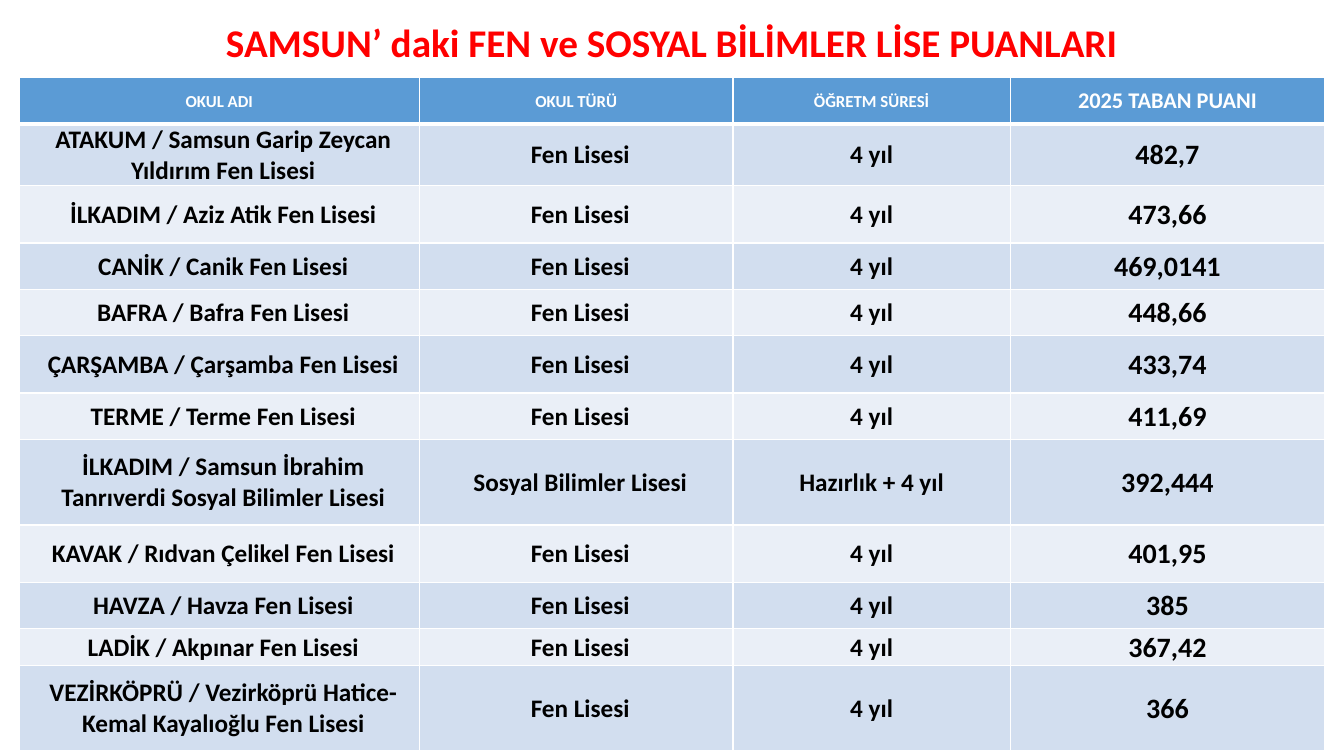
from pptx import Presentation
from pptx.dml.color import RGBColor
from pptx.enum.text import MSO_ANCHOR, PP_ALIGN
from pptx.oxml import parse_xml
from pptx.oxml.ns import nsdecls
from pptx.util import Pt

CENTER = PP_ALIGN.CENTER
MIDDLE = MSO_ANCHOR.MIDDLE

RED = RGBColor(0xFF, 0x00, 0x00)
WHITE = RGBColor(0xFF, 0xFF, 0xFF)
BLACK = RGBColor(0x00, 0x00, 0x00)
HEADER_BLUE = RGBColor(0x5B, 0x9B, 0xD5)
BAND_DARK = RGBColor(0xD2, 0xDE, 0xEF)
BAND_LIGHT = RGBColor(0xEA, 0xEF, 0xF7)

EMU_PER_PX = 9144
SLIDE_SIZE = (1333, 750)

SCIENCE = ("Fen Lisesi", "4 yıl")
SOCIAL = ("Sosyal Bilimler Lisesi", "Hazırlık + 4 yıl")
HEADINGS = ("OKUL ADI", "OKUL TÜRÜ", "ÖĞRETM SÜRESİ", "2025 TABAN PUANI")
SCHOOLS = [
    ("ATAKUM / Samsun Garip Zeycan Yıldırım Fen Lisesi", *SCIENCE, "482,7"),
    ("İLKADIM / Aziz Atik Fen Lisesi", *SCIENCE, "473,66"),
    ("CANİK / Canik Fen Lisesi", *SCIENCE, "469,0141"),
    ("BAFRA / Bafra Fen Lisesi", *SCIENCE, "448,66"),
    ("ÇARŞAMBA / Çarşamba Fen Lisesi", *SCIENCE, "433,74"),
    ("TERME / Terme Fen Lisesi", *SCIENCE, "411,69"),
    ("İLKADIM / Samsun İbrahim Tanrıverdi Sosyal Bilimler Lisesi", *SOCIAL, "392,444"),
    ("KAVAK / Rıdvan Çelikel Fen Lisesi", *SCIENCE, "401,95"),
    ("HAVZA / Havza Fen Lisesi", *SCIENCE, "385"),
    ("LADİK / Akpınar Fen Lisesi", *SCIENCE, "367,42"),
    ("VEZİRKÖPRÜ / Vezirköprü Hatice-Kemal Kayalıoğlu Fen Lisesi", *SCIENCE, "366"),
]
COLUMN_WIDTHS = (397, 311, 275, 312)
ROW_HEIGHTS = (46, 57, 57, 46, 46, 57, 46, 85, 57, 46, 36, 85)
HEADING_SIZES = (12, 12, 12, 16)
SCHOOL_SIZES = (18, 18, 18, 20)


def px(length):
    return length * EMU_PER_PX


def write(frame, text, size, color, font="Calibri", bold=True, spacing=1.0):
    paragraph = frame.paragraphs[0]
    paragraph.alignment = CENTER
    paragraph.line_spacing = spacing
    run = paragraph.add_run()
    run.text = text
    run.font.name = font
    run.font.size = Pt(size)
    run.font.bold = bold
    run.font.color.rgb = color


class ScoreSlide:
    def __init__(self, slide, border_color):
        self.slide = slide
        self.border_color = border_color

    def title(self, text, left, top, width, height):
        heading = self.slide.shapes.add_textbox(*map(px, (left, top, width, height)))
        frame = heading.text_frame
        frame.word_wrap = True
        frame.vertical_anchor = MIDDLE
        write(frame, text, size=28, color=RED, spacing=0.9)

    def borders(self, cell, top, bottom):
        properties = cell._tc.get_or_add_tcPr()
        sides = (("L", 1), ("R", 1), ("T", top), ("B", bottom))
        for position, (side, points) in enumerate(sides):
            properties.insert(position, parse_xml(
                f'<a:ln{side} {nsdecls("a")} w="{Pt(points)}"><a:solidFill>'
                f'<a:srgbClr val="{self.border_color}"/></a:solidFill></a:ln{side}>'))

    def cell(self, cell, text, size, color, fill, indent):
        cell.fill.solid()
        cell.fill.fore_color.rgb = fill
        cell.vertical_anchor = MIDDLE
        cell.margin_left = px(indent)
        cell.margin_top = cell.margin_right = px(1)
        cell.margin_bottom = 0
        write(cell.text_frame, text, size=size, color=color)

    def table(self, left, top):
        bounds = (left, top, sum(COLUMN_WIDTHS), sum(ROW_HEIGHTS))
        scores = self.slide.shapes.add_table(
            len(ROW_HEIGHTS), len(COLUMN_WIDTHS), *map(px, bounds)).table
        for column, width in zip(scores.columns, COLUMN_WIDTHS):
            column.width = px(width)
        for row, height in zip(scores.rows, ROW_HEIGHTS):
            row.height = px(height)
        for r, texts in enumerate([HEADINGS, *SCHOOLS]):
            is_header = r == 0
            sizes = HEADING_SIZES if is_header else SCHOOL_SIZES
            color = WHITE if is_header else BLACK
            band = BAND_DARK if r % 2 else BAND_LIGHT
            fill = HEADER_BLUE if is_header else band
            for c, (text, size) in enumerate(zip(texts, sizes)):
                cell = scores.cell(r, c)
                indent = 1 if is_header or c > 1 else 9
                self.cell(cell, text, size, color, fill, indent)
                self.borders(cell, top=3 if r == 1 else 1, bottom=3 if is_header else 1)


def main():
    deck = Presentation()
    deck.slide_width, deck.slide_height = map(px, SLIDE_SIZE)
    page = ScoreSlide(deck.slides.add_slide(deck.slide_layouts[6]), WHITE)
    page.title("SAMSUN’ daki FEN ve SOSYAL BİLİMLER LİSE PUANLARI", 166, 26, 1000, 37)
    page.table(19, 77)
    deck.save("out.pptx")


if __name__ == "__main__":
    main()
